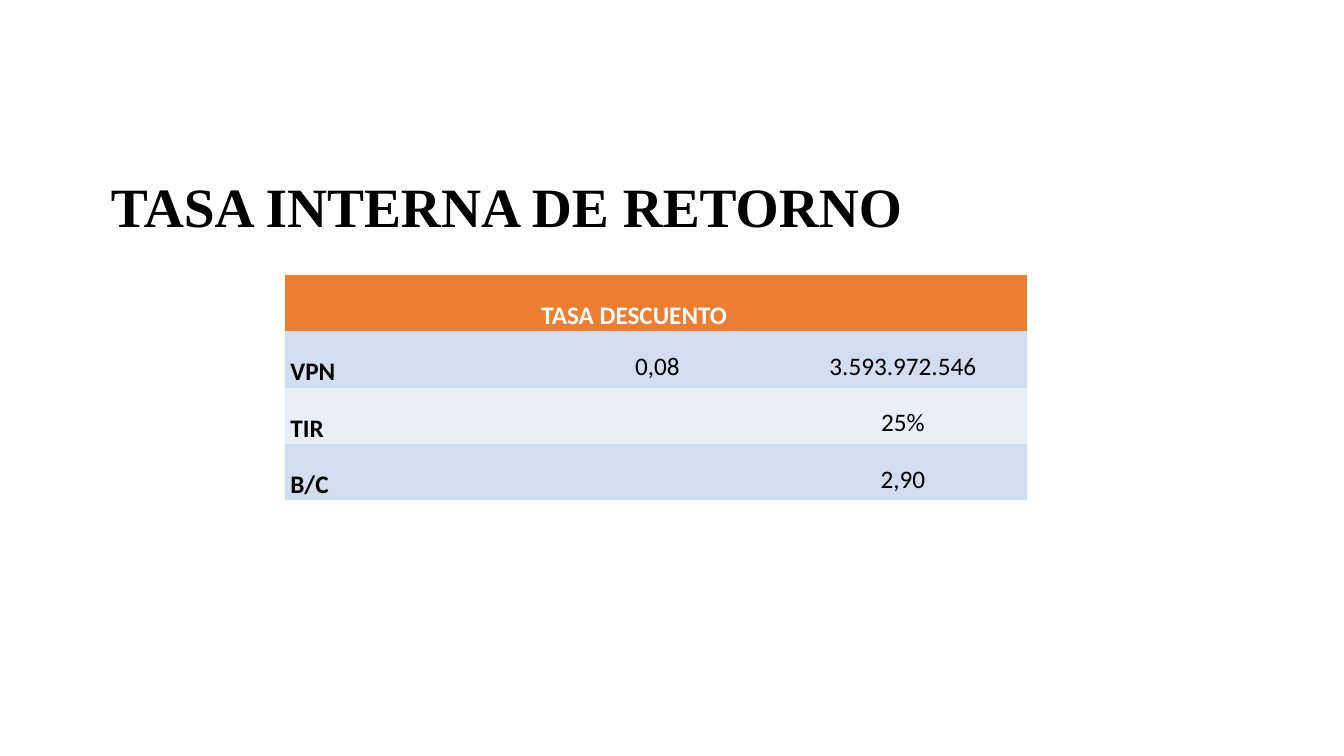
from dataclasses import dataclass

from pptx import Presentation
from pptx.dml.color import RGBColor
from pptx.enum.text import MSO_ANCHOR, MSO_AUTO_SIZE, PP_ALIGN
from pptx.util import Inches, Pt

LEFT, CENTER, JUSTIFY = PP_ALIGN.LEFT, PP_ALIGN.CENTER, PP_ALIGN.JUSTIFY
MIDDLE, BOTTOM = MSO_ANCHOR.MIDDLE, MSO_ANCHOR.BOTTOM
NO_AUTOFIT = MSO_AUTO_SIZE.NONE
TITLE_ONLY_LAYOUT = 5
PLAIN_TABLE_STYLE = "{2D5ABB26-0587-4C30-8999-92F81FD0307C}"

COLUMN_WIDTHS = (2.49, 2.4, 2.47)
ROWS = (
    ("", "TASA DESCUENTO", ""),
    ("VPN", "0,08", "3.593.972.546"),
    ("TIR", "", "25%"),
    ("B/C", "", "2,90"),
)


@dataclass(frozen=True)
class Theme:
    """Colours, fonts and type sizes of the slide."""

    text: RGBColor = RGBColor(0x00, 0x00, 0x00)
    header_text: RGBColor = RGBColor(0xFF, 0xFF, 0xFF)
    header_fill: RGBColor = RGBColor(0xED, 0x7D, 0x31)
    bands: tuple = (RGBColor(0xEA, 0xEF, 0xF7), RGBColor(0xD2, 0xDE, 0xEF))
    title_font: str = "Times New Roman"
    table_font: str = "Calibri"
    title_size: float = 39.6
    table_size: float = 18


THEME = Theme()


def style_font(font, name, size, color, bold):
    """Apply typeface, size, colour and weight to a font."""
    font.name, font.size, font.bold = name, Pt(size), bold
    font.color.rgb = color


def place_title(slide, text, left, top, width, height):
    """Move and format the title placeholder inside the given box."""
    title = slide.shapes.title
    title.left, title.top = Inches(left), Inches(top)
    title.width, title.height = Inches(width), Inches(height)
    frame = title.text_frame
    frame.text = text
    frame.auto_size, frame.vertical_anchor = NO_AUTOFIT, MIDDLE
    paragraph = frame.paragraphs[0]
    paragraph.alignment, paragraph.line_spacing = LEFT, 0.9
    style_font(paragraph.font, THEME.title_font, THEME.title_size, THEME.text, True)


def fill_cell(cell, text, row, column):
    """Fill one cell, formatted as a header, a row label or a value."""
    is_header = row == 0
    is_label = is_header or column == 0
    cell.fill.solid()
    cell.fill.fore_color.rgb = THEME.header_fill if is_header else THEME.bands[row % 2]
    cell.margin_left = cell.margin_right = Inches(0.05)
    cell.margin_top = cell.margin_bottom = 0
    cell.vertical_anchor = BOTTOM if is_label else MIDDLE
    cell.text = text
    paragraph = cell.text_frame.paragraphs[0]
    paragraph.alignment = JUSTIFY if is_label else CENTER
    paragraph.line_spacing = 1.5
    color = THEME.header_text if is_header else THEME.text
    style_font(paragraph.font, THEME.table_font, THEME.table_size, color, is_label)


def place_table(slide, rows, column_widths, left, top, height):
    """Add the table with equal rows at the given position."""
    frame = slide.shapes.add_table(
        len(rows), len(column_widths), Inches(left), Inches(top),
        Inches(sum(column_widths)), Inches(height),
    )
    table = frame.table
    table._tbl.tblPr.find("{*}tableStyleId").text = PLAIN_TABLE_STYLE
    for column, width in zip(table.columns, column_widths):
        column.width = Inches(width)
    for row, texts in enumerate(rows):
        for column, text in enumerate(texts):
            fill_cell(table.cell(row, column), text, row, column)


def main():
    """Build the slide and save the presentation."""
    presentation = Presentation()
    presentation.slide_width, presentation.slide_height = Inches(13.33), Inches(7.5)
    layout = presentation.slide_layouts[TITLE_ONLY_LAYOUT]
    slide = presentation.slides.add_slide(layout)
    place_title(slide, "TASA INTERNA DE RETORNO", 1, 1.53, 8.41, 1.1)
    place_table(slide, ROWS, COLUMN_WIDTHS, 2.83, 2.73, 2.23)
    presentation.save("out.pptx")


if __name__ == "__main__":
    main()
